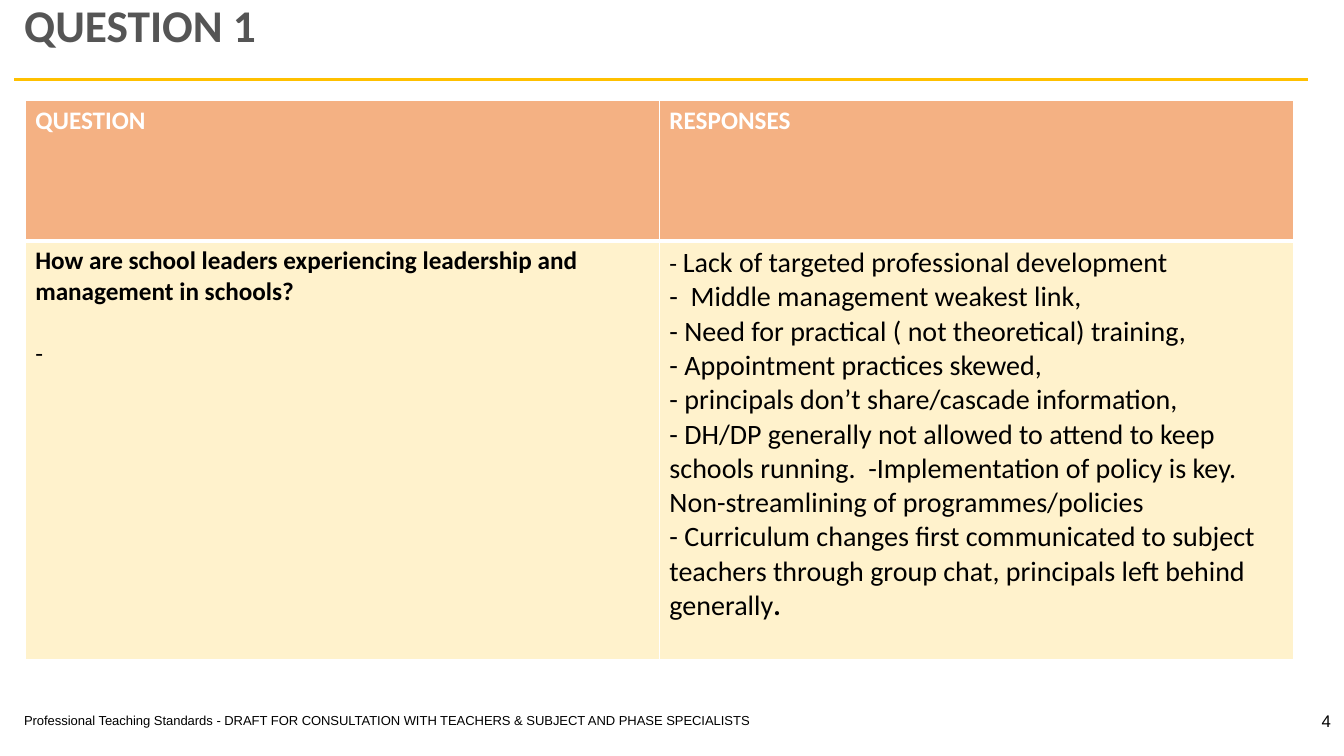
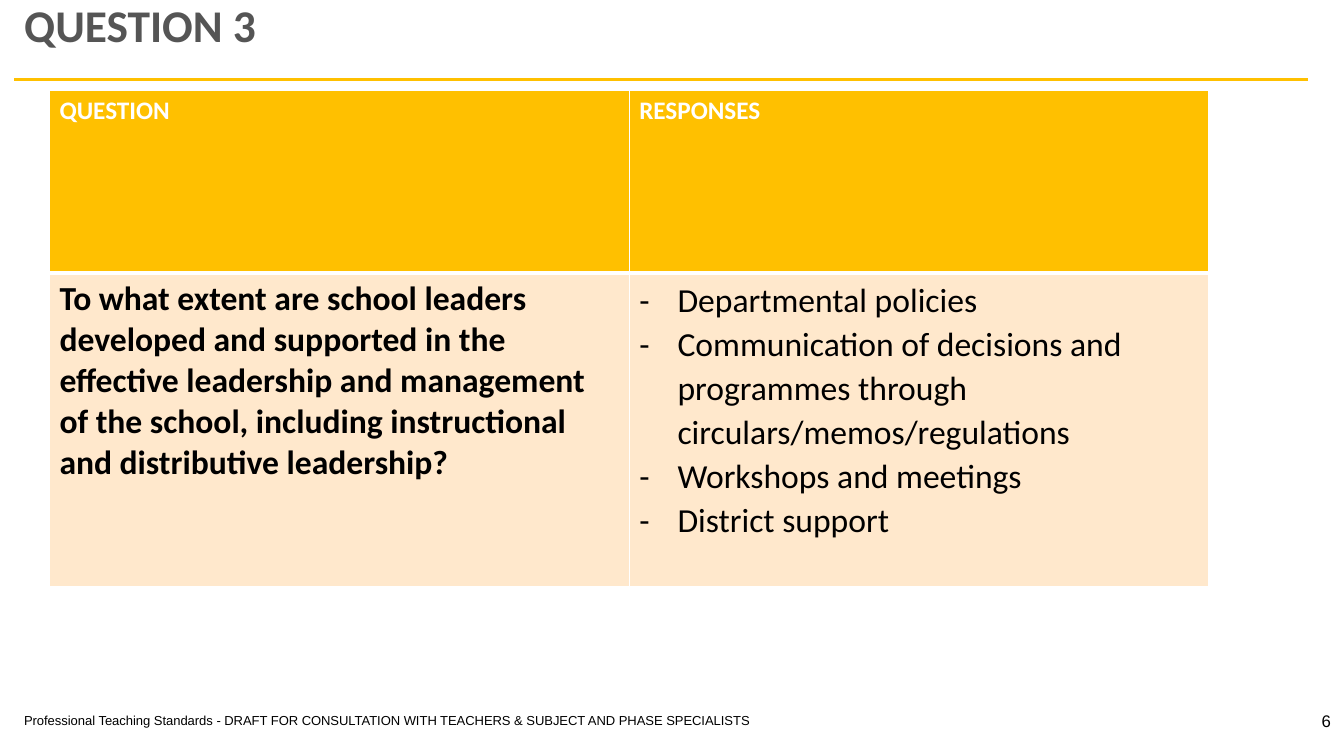
from pptx import Presentation
from pptx.dml.color import RGBColor
from pptx.enum.shapes import MSO_CONNECTOR
from pptx.enum.text import MSO_ANCHOR, MSO_AUTO_SIZE, PP_ALIGN
from pptx.oxml import parse_xml
from pptx.oxml.ns import nsdecls
from pptx.util import Emu, Pt

EMU_PER_PX = 9144

WHITE = RGBColor(0xFF, 0xFF, 0xFF)
BLACK = RGBColor(0x00, 0x00, 0x00)
GREY = RGBColor(0x55, 0x55, 0x55)
GOLD = RGBColor(0xFF, 0xC0, 0x00)
ORANGE = RGBColor(0xF4, 0xB1, 0x83)
CREAM = RGBColor(0xFF, 0xF2, 0xCC)
PEACH = RGBColor(0xFF, 0xE8, 0xCC)

TITLE_FONT = {"name": "Calibri", "size": Pt(32.4), "bold": True}
HEADER_FONT = {"name": "Calibri", "size": Pt(18), "bold": True}
FOOTER_FONT = {"name": "Arial", "size": Pt(9.3)}
NUMBER_FONT = {"name": "Arial", "size": Pt(12)}
BORDER_SIDES = ("lnL", "lnR", "lnT", "lnB")

FOOTER = ("Professional Teaching Standards - DRAFT FOR CONSULTATION WITH "
          "TEACHERS & SUBJECT AND PHASE SPECIALISTS")
HEADINGS = ("QUESTION", "RESPONSES")


def px(length):
    return Emu(length * EMU_PER_PX)


def body_font(size, bold=False):
    return {"name": "Calibri", "size": Pt(size), "bold": bold}


def apply_format(target, values):
    for name, value in values.items():
        setattr(target, name, value)


def add_run(paragraph, text, font, color=BLACK):
    run = paragraph.add_run()
    run.text = text
    apply_format(run.font, font)
    run.font.color.rgb = color


def add_label(slide, box, text, font, align=PP_ALIGN.LEFT, **frame_format):
    label = slide.shapes.add_textbox(*map(px, box))
    apply_format(label.text_frame, frame_format)
    paragraph = label.text_frame.paragraphs[0]
    paragraph.alignment = align
    add_run(paragraph, text, font)
    return label


def add_rule(slide):
    rule = slide.shapes.add_connector(
        MSO_CONNECTOR.STRAIGHT, px(14), px(79), px(1297), px(79))
    rule.line.color.rgb = GOLD
    rule.line.width = Pt(2.25)
    rule._element.spPr.append(parse_xml(f"<a:effectLst {nsdecls('a')}/>"))
    return rule


def set_up_layout(layout, slide):
    title = layout.placeholders[0]
    apply_format(title, {"left": px(14), "top": px(-2),
                         "width": px(1150), "height": px(92)})
    footer = add_label(slide, (14, 702, 777, 26), FOOTER, FOOTER_FONT)
    for shape in (add_rule(slide), footer):
        layout.shapes._spTree.append(shape._element)


def add_title(slide, text):
    frame = slide.shapes.title.text_frame
    apply_format(frame, {"vertical_anchor": MSO_ANCHOR.TOP,
                         "auto_size": MSO_AUTO_SIZE.NONE})
    paragraph = frame.paragraphs[0]
    apply_format(paragraph, {"alignment": PP_ALIGN.LEFT, "line_spacing": 0.9})
    add_run(paragraph, text, TITLE_FONT, GREY)


def add_number(slide, number):
    add_label(slide, (1283, 695, 47, 40), str(number), NUMBER_FONT,
              PP_ALIGN.RIGHT, vertical_anchor=MSO_ANCHOR.MIDDLE, word_wrap=True)


def add_dash_bullet(paragraph):
    properties = paragraph._p.get_or_add_pPr()
    properties.set("marL", str(px(38)))
    properties.set("indent", str(px(-38)))
    for xml in (f'<a:buFont {nsdecls("a")} typeface="Calibri"/>',
                f'<a:buChar {nsdecls("a")} char="-"/>'):
        properties.append(parse_xml(xml))


def style_cell(cell, fill, bottom_width):
    cell.fill.solid()
    cell.fill.fore_color.rgb = fill
    properties = cell._tc.get_or_add_tcPr()
    for position, side in enumerate(BORDER_SIDES):
        width = Pt(bottom_width if side == "lnB" else 1)
        properties.insert(position, parse_xml(
            f'<a:{side} {nsdecls("a")} w="{width}"><a:solidFill>'
            f'<a:srgbClr val="{WHITE}"/></a:solidFill></a:{side}>'))


def fill_cell(cell, paragraphs, bulleted=False, spacing=None):
    frame = cell.text_frame
    for index, runs in enumerate(paragraphs):
        paragraph = frame.add_paragraph() if index else frame.paragraphs[0]
        if bulleted:
            add_dash_bullet(paragraph)
            paragraph.line_spacing = 1.07
        for text, font in runs:
            add_run(paragraph, text, font)
    apply_format(frame.paragraphs[-1], spacing or {})


def add_question_table(slide, box, header_height, header_fill, body_fill):
    left, top, width, height = box
    table = slide.shapes.add_table(2, 2, *map(px, box)).table
    table.horz_banding = False
    for column in table.columns:
        column.width = px(width // 2)
    table.rows[0].height = px(header_height)
    table.rows[1].height = px(height - header_height)
    for column, heading in enumerate(HEADINGS):
        header, body = table.cell(0, column), table.cell(1, column)
        style_cell(header, header_fill, 3)
        style_cell(body, body_fill, 1)
        add_run(header.text_frame.paragraphs[0], heading, HEADER_FONT, WHITE)
    return table.cell(1, 0), table.cell(1, 1)


def add_question_slide(presentation, layout, title, number):
    slide = presentation.slides.add_slide(layout)
    add_title(slide, title)
    add_number(slide, number)
    return slide


def fill_experience_slide(slide):
    question, responses = add_question_table(
        slide, (25, 100, 1258, 554), 139, ORANGE, CREAM)
    fill_cell(question, [
        [("How are school leaders experiencing leadership and management "
          "in schools?", body_font(18, True))],
        [("-", body_font(18))],
    ], spacing={"space_before": Pt(22)})
    large = body_font(20)
    answers = [
        "-  Middle management weakest link,",
        "- Need for practical ( not theoretical) training,",
        "- Appointment practices skewed,",
        "- principals don’t share/cascade information,",
        "- DH/DP generally not allowed to attend to keep schools running.  "
        "-Implementation of policy is key.  "
        "Non-streamlining of programmes/policies",
    ]
    fill_cell(responses, [
        [("- ", body_font(18)),
         ("Lack of targeted professional development", large)],
        *[[(answer, large)] for answer in answers],
        [("- Curriculum changes first communicated to subject teachers "
          "through group chat, principals left behind generally", large),
         (".", body_font(20, True))],
    ])


def fill_support_slide(slide):
    question, responses = add_question_table(
        slide, (49, 90, 1150, 492), 181, GOLD, PEACH)
    fill_cell(question, [[(
        "To what extent are school leaders developed and supported in the "
        "effective leadership and management of the school, including "
        "instructional and distributive leadership?", body_font(24, True))]])
    answers = [
        "Departmental policies",
        "Communication of decisions and programmes through "
        "circulars/memos/regulations",
        "Workshops and meetings",
        "District support",
    ]
    fill_cell(responses, [[(answer, body_font(24))] for answer in answers],
              bulleted=True, spacing={"space_after": Pt(8)})


def main():
    presentation = Presentation()
    apply_format(presentation, {"slide_width": px(1333),
                                "slide_height": px(750)})
    layout = presentation.slide_layouts[5]
    experience = add_question_slide(presentation, layout, "QUESTION 1", 4)
    support = add_question_slide(presentation, layout, "QUESTION 3", 6)
    set_up_layout(layout, experience)
    fill_experience_slide(experience)
    fill_support_slide(support)
    presentation.save("out.pptx")


if __name__ == "__main__":
    main()
